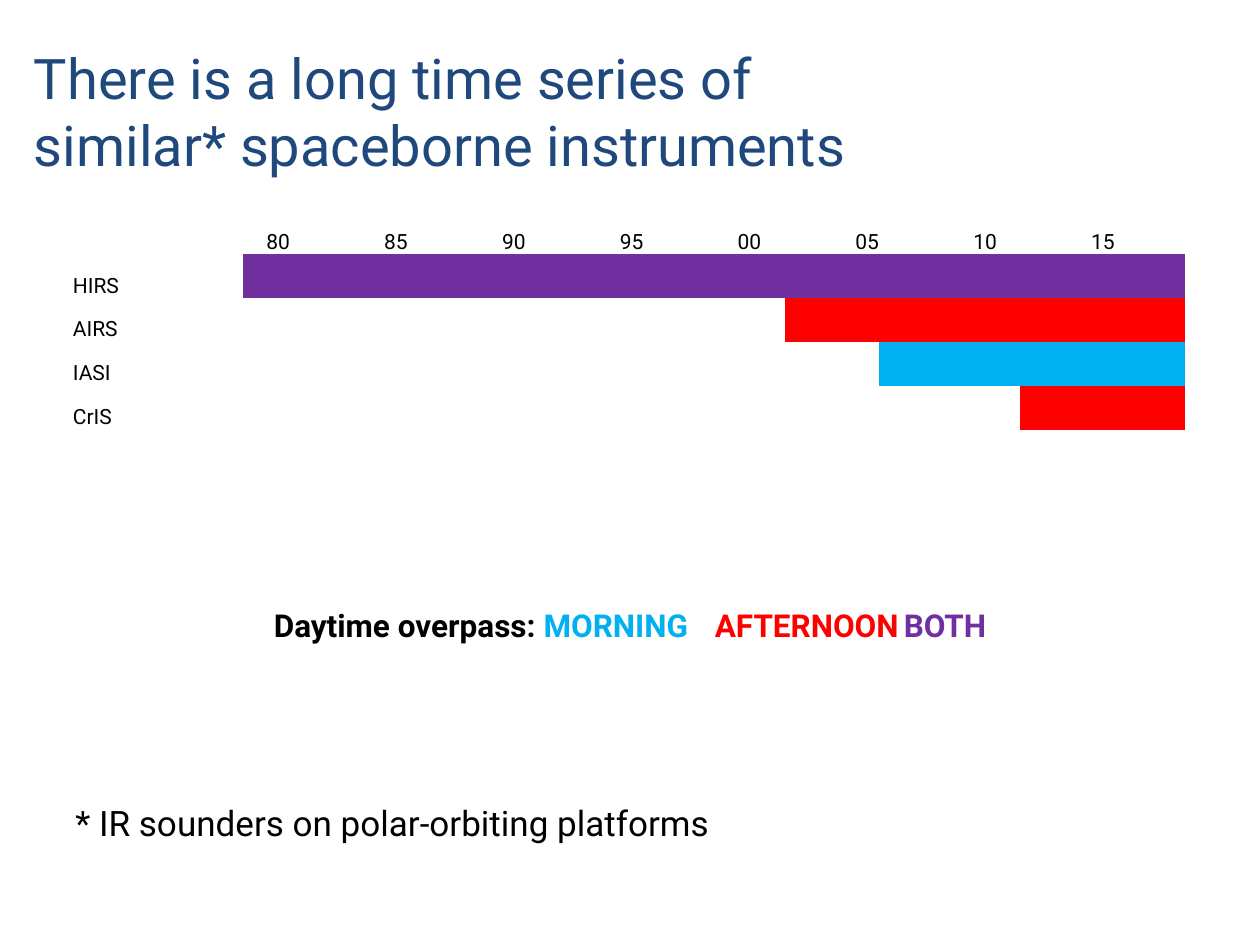
from pptx import Presentation
from pptx.dml.color import RGBColor
from pptx.enum.text import MSO_ANCHOR, PP_ALIGN
from pptx.oxml.ns import qn
from pptx.util import Cm, Pt

FONT = "Roboto"
BLACK, NAVY = "000000", "1F497D"
MORNING, AFTERNOON, BOTH = "00B0F0", "FF0000", "7030A0"
NO_STYLE = "{2D5ABB26-0587-4C30-8999-92F81FD0307C}"
FIRST_YEAR, LAST_YEAR = 1978, 2018
INSTRUMENTS = [("HIRS", 1979, BOTH), ("AIRS", 2002, AFTERNOON),
               ("IASI", 2006, MORNING), ("CrIS", 2012, AFTERNOON)]


def rgb(color):
    """Turn a hex string into a colour."""
    return RGBColor.from_string(color)


def add_run(p, text, size, color=BLACK, bold=False):
    """Append one formatted run to a paragraph."""
    r = p.add_run()
    r.text = text
    r.font.name, r.font.size, r.font.bold = FONT, Pt(size), bold
    r.font.color.rgb = rgb(color)


def add_title(s, x, y, w, h):
    """Place the two-line title in the layout's placeholder."""
    sp = s.shapes.title
    sp.left, sp.top, sp.width, sp.height = Cm(x), Cm(y), Cm(w), Cm(h)
    tf = sp.text_frame
    tf.vertical_anchor = MSO_ANCHOR.MIDDLE
    p = tf.paragraphs[0]
    p.alignment = PP_ALIGN.LEFT
    add_run(p, "There is a long time series of", 32, NAVY)
    p.add_line_break()
    add_run(p, "similar* spaceborne instruments", 32, NAVY)


def add_timeline(s, x, y, w, h, label_w=2.95):
    """Draw the instrument timeline as a table with one column per year."""
    years = range(FIRST_YEAR, LAST_YEAR + 1)
    rows = len(INSTRUMENTS) + 1
    tbl = s.shapes.add_table(rows, len(years) + 1, Cm(x), Cm(y), Cm(w), Cm(h)).table
    tbl.first_row = tbl.horz_banding = False
    tbl._tbl.tblPr.find(qn("a:tableStyleId")).text = NO_STYLE
    for i, col in enumerate(tbl.columns):
        col.width = Cm((w - label_w) / len(years) if i else label_w)
    for row in tbl.rows:
        row.height = Cm(h / rows)
    for cell in tbl.iter_cells():
        cell.margin_left = cell.margin_right = cell.margin_top = cell.margin_bottom = 0
        cell.vertical_anchor = MSO_ANCHOR.BOTTOM
        cell.fill.background()
    for i, year in enumerate(years, 1):
        if year % 5 == 0:
            add_run(tbl.cell(0, i).text_frame.paragraphs[0], f"{year % 100:02d}", 12)
    for row, (name, start, color) in enumerate(INSTRUMENTS, 1):
        add_run(tbl.cell(row, 0).text_frame.paragraphs[0], name, 12)
        for i, year in enumerate(years, 1):
            if year >= start:
                fill = tbl.cell(row, i).fill
                fill.solid()
                fill.fore_color.rgb = rgb(color)


def add_text(s, x, y, w, h, runs, size, bold=False, align=PP_ALIGN.LEFT):
    """Add a one-paragraph text box made of (text, colour) runs."""
    tf = s.shapes.add_textbox(Cm(x), Cm(y), Cm(w), Cm(h)).text_frame
    tf.word_wrap = True
    p = tf.paragraphs[0]
    p.alignment = align
    for text, color in runs:
        add_run(p, text, size, color, bold)


def main():
    """Build the slide and save it."""
    prs = Presentation()
    prs.slide_width, prs.slide_height = Cm(25.4), Cm(19.05)
    s = prs.slides.add_slide(prs.slide_layouts[5])
    add_title(s, 0.43, 0.64, 24.97, 3.18)
    add_timeline(s, 1.47, 4.24, 22.43, 4.43)
    add_text(s, 1.27, 16.03, 22.43, 1.12,
             [("* IR sounders on polar-orbiting platforms", BLACK)], 20)
    legend = [("Daytime overpass:", BLACK), (" MORNING\t", MORNING),
              ("AFTERNOON\t", AFTERNOON), ("BOTH", BOTH)]
    add_text(s, 0, 12.09, 25.4, 1.02, legend, 18, True, PP_ALIGN.CENTER)
    prs.save("out.pptx")


if __name__ == "__main__":
    main()
